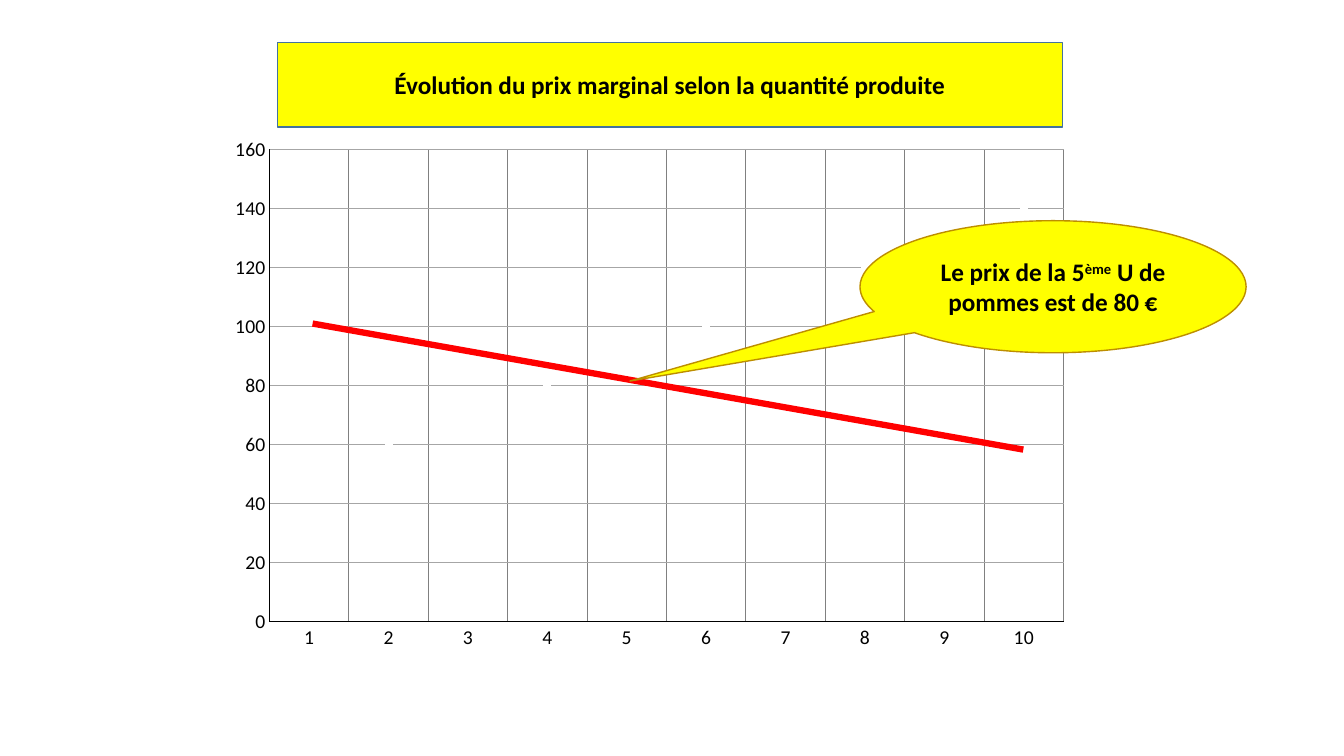
from dataclasses import dataclass

from lxml import etree
from pptx import Presentation
from pptx.chart.data import CategoryChartData
from pptx.dml.color import RGBColor
from pptx.enum.chart import XL_CHART_TYPE, XL_MARKER_STYLE, XL_TICK_MARK
from pptx.enum.shapes import MSO_CONNECTOR, MSO_SHAPE
from pptx.enum.text import MSO_ANCHOR, MSO_AUTO_SIZE, PP_ALIGN
from pptx.oxml import parse_xml
from pptx.oxml.ns import nsdecls, qn
from pptx.util import Inches, Pt

TITLE = [("Évolution du prix marginal selon la quantité produite", False)]
CALLOUT = [("Le prix de la 5", False), ("ème", True), (" U de pommes est de 80 €", False)]
QUANTITIES = [str(quantity) for quantity in range(1, 11)]
VALUES = list(range(50, 150, 10))

# Percent of the slide's width and height: left, top, width, height
TITLE_BOX = (20.63, 5.6, 58.44, 11.2)
CHART_BOX = (16.2, 16.93, 64.22, 70.27)
CALLOUT_BOX = (63.99, 29.2, 28.73, 17.47)
PRICE_LINE = (23.26, 42.8, 76.14, 59.47)  # start x, y and end x, y
CALLOUT_TIP = (-1.096, 0.714)  # shares of the callout, from its centre
PLOT_AREA = {"x": 0.06, "y": 0.04, "w": 0.92, "h": 0.89}  # shares of the chart


@dataclass(frozen=True)
class Theme:
    font: str = "Calibri"
    ink: RGBColor = RGBColor(0, 0, 0)
    paper: RGBColor = RGBColor(255, 255, 255)
    highlight: RGBColor = RGBColor(255, 255, 0)
    price: RGBColor = RGBColor(255, 0, 0)
    title_edge: RGBColor = RGBColor(0x43, 0x73, 0x9E)
    callout_edge: RGBColor = RGBColor(0xBD, 0x8E, 0)
    row_grid: RGBColor = RGBColor(0xA6, 0xA6, 0xA6)
    column_grid: RGBColor = RGBColor(0x80, 0x80, 0x80)
    text_size: Pt = Pt(18)
    axis_size: Pt = Pt(14)
    thin: Pt = Pt(0.75)
    edge: Pt = Pt(1)
    thick: Pt = Pt(4.5)


THEME = Theme()
SLIDE_SIZE = (Inches(13.33), Inches(7.5))


def place(shares):
    return [round(share / 100 * SLIDE_SIZE[i % 2]) for i, share in enumerate(shares)]


def apply(target, formats):
    for name, value in formats.items():
        setattr(target, name, value)


def set_line(line, color, width):
    line.color.rgb = color
    line.width = width


def set_font(font, size, bold=False):
    apply(font, {"name": THEME.font, "size": size, "bold": bold})
    font.color.rgb = THEME.ink


def fill_panel(panel, runs, edge_color):
    """Give a panel its yellow fill, its edge and centred bold text."""
    panel.fill.solid()
    panel.fill.fore_color.rgb = THEME.highlight
    set_line(panel.line, edge_color, THEME.edge)
    frame = panel.text_frame
    apply(frame, {"word_wrap": True, "auto_size": MSO_AUTO_SIZE.NONE,
                  "vertical_anchor": MSO_ANCHOR.MIDDLE})
    paragraph = frame.paragraphs[0]
    paragraph.alignment = PP_ALIGN.CENTER
    for text, raised in runs:
        run = paragraph.add_run()
        run.text = text
        set_font(run.font, THEME.text_size, bold=True)
        if raised:
            run.font._element.set("baseline", "30000")


def add_title(slide):
    title = slide.shapes.title
    apply(title, dict(zip(("left", "top", "width", "height"), place(TITLE_BOX))))
    fill_panel(title, TITLE, THEME.title_edge)


def fix_plot_area(chart):
    plot_area = chart._chartSpace.chart.plotArea
    for layout in plot_area.findall(qn("c:layout")):
        plot_area.remove(layout)
    layout = parse_xml(f"<c:layout {nsdecls('c')}><c:manualLayout/></c:layout>")
    settings = {"layoutTarget": "inner", "xMode": "edge", "yMode": "edge", **PLOT_AREA}
    for name, value in settings.items():
        etree.SubElement(layout[0], qn(f"c:{name}")).set("val", str(value))
    plot_area.insert(0, layout)


def add_chart(slide):
    chart_data = CategoryChartData()
    chart_data.categories = QUANTITIES
    chart_data.add_series("Series 1", VALUES)
    chart = slide.shapes.add_chart(
        XL_CHART_TYPE.LINE_MARKERS, *place(CHART_BOX), chart_data).chart
    apply(chart, {"has_legend": False, "has_title": False})
    set_font(chart.font, THEME.axis_size)
    fix_plot_area(chart)

    grids = ((chart.category_axis, THEME.column_grid), (chart.value_axis, THEME.row_grid))
    for axis, grid_color in grids:
        apply(axis, {"has_major_gridlines": True, "major_tick_mark": XL_TICK_MARK.NONE,
                     "minor_tick_mark": XL_TICK_MARK.NONE})
        set_line(axis.format.line, THEME.ink, THEME.thin)
        set_line(axis.major_gridlines.format.line, grid_color, THEME.thin)
        set_font(axis.tick_labels.font, THEME.axis_size)
    apply(chart.value_axis, {"minimum_scale": 0, "maximum_scale": 160, "major_unit": 20})

    plot = chart.plots[0]
    plot.vary_by_categories = False
    series = plot.series[0]
    series.smooth = False
    series.format.line.fill.background()
    apply(series.marker, {"style": XL_MARKER_STYLE.CIRCLE, "size": 5})
    series.marker.format.fill.solid()
    series.marker.format.fill.fore_color.rgb = THEME.paper
    series.marker.format.line.fill.background()


def add_price_line(slide):
    price_line = slide.shapes.add_connector(MSO_CONNECTOR.STRAIGHT, *place(PRICE_LINE))
    set_line(price_line.line, THEME.price, THEME.thick)
    etree.SubElement(price_line._element.spPr, qn("a:effectLst"))


def add_callout(slide):
    callout = slide.shapes.add_shape(MSO_SHAPE.OVAL_CALLOUT, *place(CALLOUT_BOX))
    callout.shadow.inherit = False
    for i, share in enumerate(CALLOUT_TIP):
        callout.adjustments[i] = share
    fill_panel(callout, CALLOUT, THEME.callout_edge)


def main():
    deck = Presentation()
    deck.slide_width, deck.slide_height = SLIDE_SIZE
    slide = deck.slides.add_slide(deck.slide_layouts[5])
    for add_part in (add_title, add_chart, add_price_line, add_callout):
        add_part(slide)
    deck.save("out.pptx")


if __name__ == "__main__":
    main()
